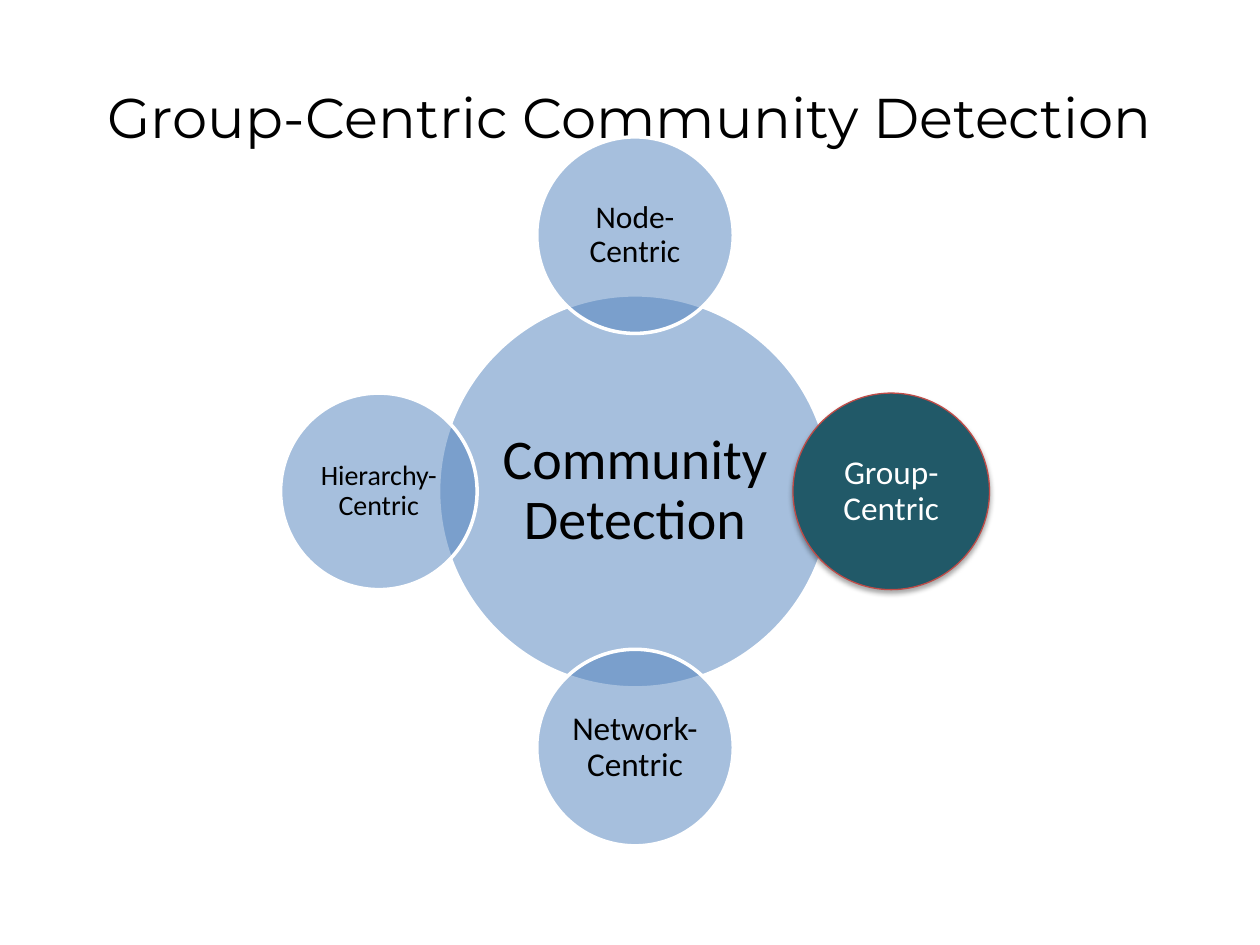
from dataclasses import dataclass

from lxml import etree
from pptx import Presentation
from pptx.dml.color import RGBColor
from pptx.enum.shapes import MSO_SHAPE
from pptx.enum.text import MSO_ANCHOR, PP_ALIGN
from pptx.oxml.ns import qn
from pptx.util import Pt

ELLIPSE = MSO_SHAPE.OVAL
MIDDLE = MSO_ANCHOR.MIDDLE
CENTER = PP_ALIGN.CENTER

BLACK = RGBColor(0x00, 0x00, 0x00)
WHITE = RGBColor(0xFF, 0xFF, 0xFF)
BLUE = RGBColor(0x4F, 0x81, 0xBD)
TEAL = RGBColor(0x21, 0x59, 0x68)
RED = RGBColor(0xBF, 0x4C, 0x48)

# Radial layout, in points
CENTER_X, CENTER_Y = 362.9, 280.8
ORBIT = 146.4
HUB_SIZE = 224.6
SATELLITE_SIZE = HUB_SIZE / 2


@dataclass(frozen=True)
class Style:
    fill: RGBColor
    line: RGBColor
    line_width: float
    text: RGBColor
    opacity: int = 100
    shadow: bool = False


@dataclass(frozen=True)
class Circle:
    label: str
    font_size: int
    inset: float
    direction: tuple[int, int] = (0, 0)
    size: float = SATELLITE_SIZE


PLAIN = Style(BLUE, WHITE, 2, BLACK, opacity=50)
HIGHLIGHT = Style(TEAL, RED, 0.75, WHITE, shadow=True)

CIRCLES = [
    (Circle("Community Detection", 32, 2.9, size=HUB_SIZE), PLAIN),
    (Circle("Node-Centric", 18, 2.2, (0, -1)), PLAIN),
    (Circle("Group-Centric", 19, 2.2, (1, 0)), HIGHLIGHT),
    (Circle("Network-Centric", 19, 2.2, (0, 1)), PLAIN),
    (Circle("Hierarchy-Centric", 16, 1.4, (-1, 0)), PLAIN),
]


def apply_format(target, values: dict) -> None:
    for name, value in values.items():
        setattr(target, name, value)


def write_text(frame, text: str, font: str, size: float, color: RGBColor,
               inset: float, spacing: float) -> None:
    apply_format(frame, {
        "word_wrap": True, "vertical_anchor": MIDDLE,
        "margin_left": Pt(inset), "margin_right": Pt(inset),
        "margin_top": Pt(inset), "margin_bottom": Pt(inset),
    })
    para = frame.paragraphs[0]
    apply_format(para, {"alignment": CENTER, "line_spacing": spacing})
    span = para.add_run()
    span.text = text
    apply_format(span.font, {"name": font, "size": Pt(size)})
    span.font.color.rgb = color


def set_opacity(shape, percent: int) -> None:
    color = shape._element.spPr.find(qn("a:solidFill"))[0]
    etree.SubElement(color, qn("a:alpha"), val=str(percent * 1000))


def add_shadow(shape) -> None:
    effects = shape._element.spPr.find(qn("a:effectLst"))
    shadow = etree.SubElement(
        effects, qn("a:outerShdw"), blurRad=str(Pt(3.1)),
        dist=str(Pt(1.8)), dir="5400000", rotWithShape="0")
    color = etree.SubElement(shadow, qn("a:srgbClr"), val=str(BLACK))
    etree.SubElement(color, qn("a:alpha"), val="35000")


def draw_circle(page, circle: Circle, style: Style) -> None:
    across, down = circle.direction
    left = CENTER_X + across * ORBIT - circle.size / 2
    top = CENTER_Y + down * ORBIT - circle.size / 2
    shape = page.shapes.add_shape(
        ELLIPSE, Pt(left), Pt(top), Pt(circle.size), Pt(circle.size))
    shape.shadow.inherit = False
    shape.fill.solid()
    shape.fill.fore_color.rgb = style.fill
    shape.line.color.rgb = style.line
    shape.line.width = Pt(style.line_width)
    if style.opacity < 100:
        set_opacity(shape, style.opacity)
    if style.shadow:
        add_shadow(shape)
    write_text(shape.text_frame, circle.label, "Calibri", circle.font_size,
               style.text, circle.inset, 0.9)


def main() -> None:
    deck = Presentation()
    apply_format(deck, {"slide_width": Pt(720), "slide_height": Pt(540)})
    page = deck.slides.add_slide(deck.slide_layouts[5])

    # Title
    title = page.shapes.title
    apply_format(title, {"left": Pt(36), "top": Pt(21.6),
                         "width": Pt(648), "height": Pt(90)})
    write_text(title.text_frame, "Group-Centric Community Detection",
               "Montserrat", 32, BLACK, 3.6, 1.0)

    # Hub first, then its satellites on top
    for circle, style in CIRCLES:
        draw_circle(page, circle, style)

    deck.save("out.pptx")


if __name__ == "__main__":
    main()
